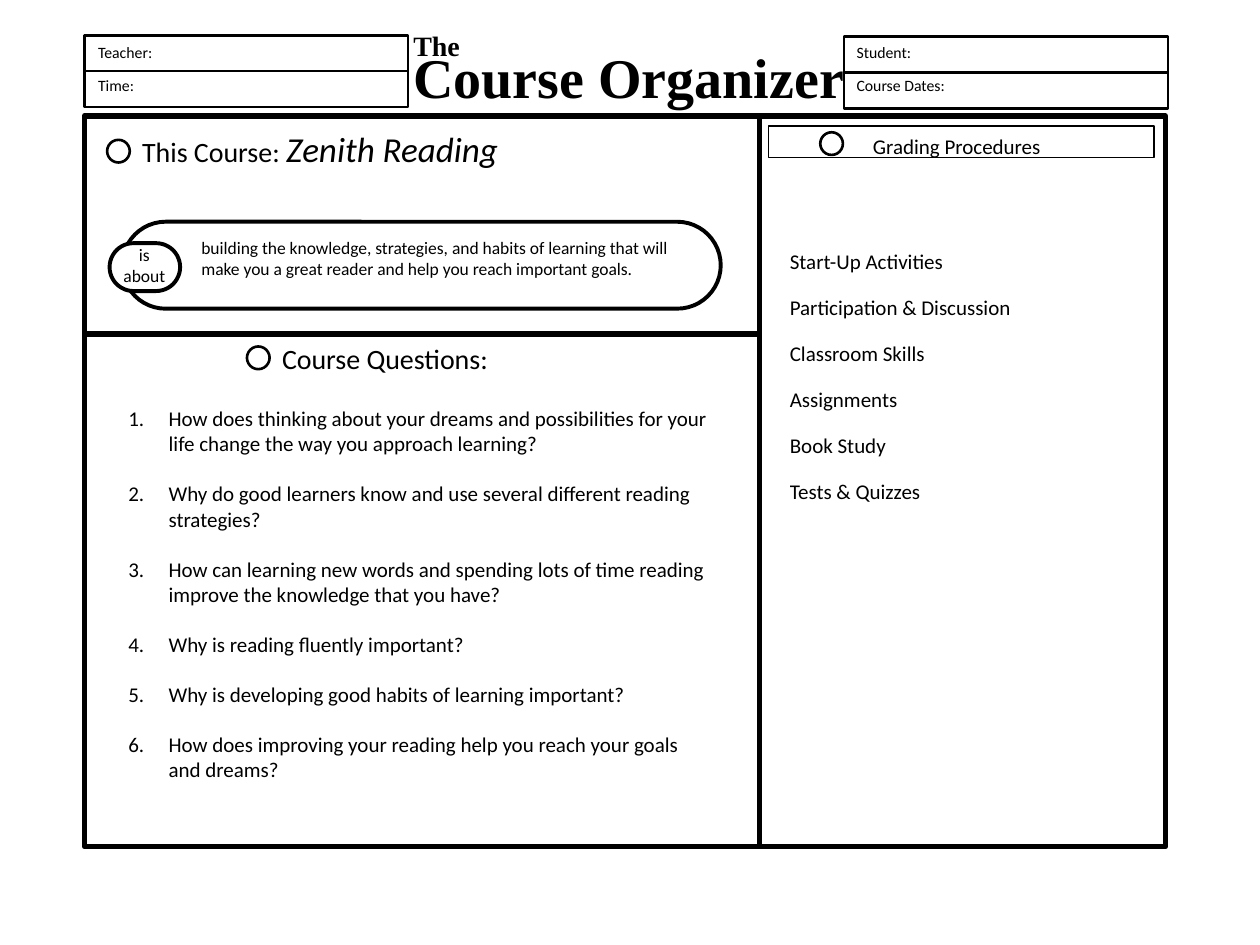
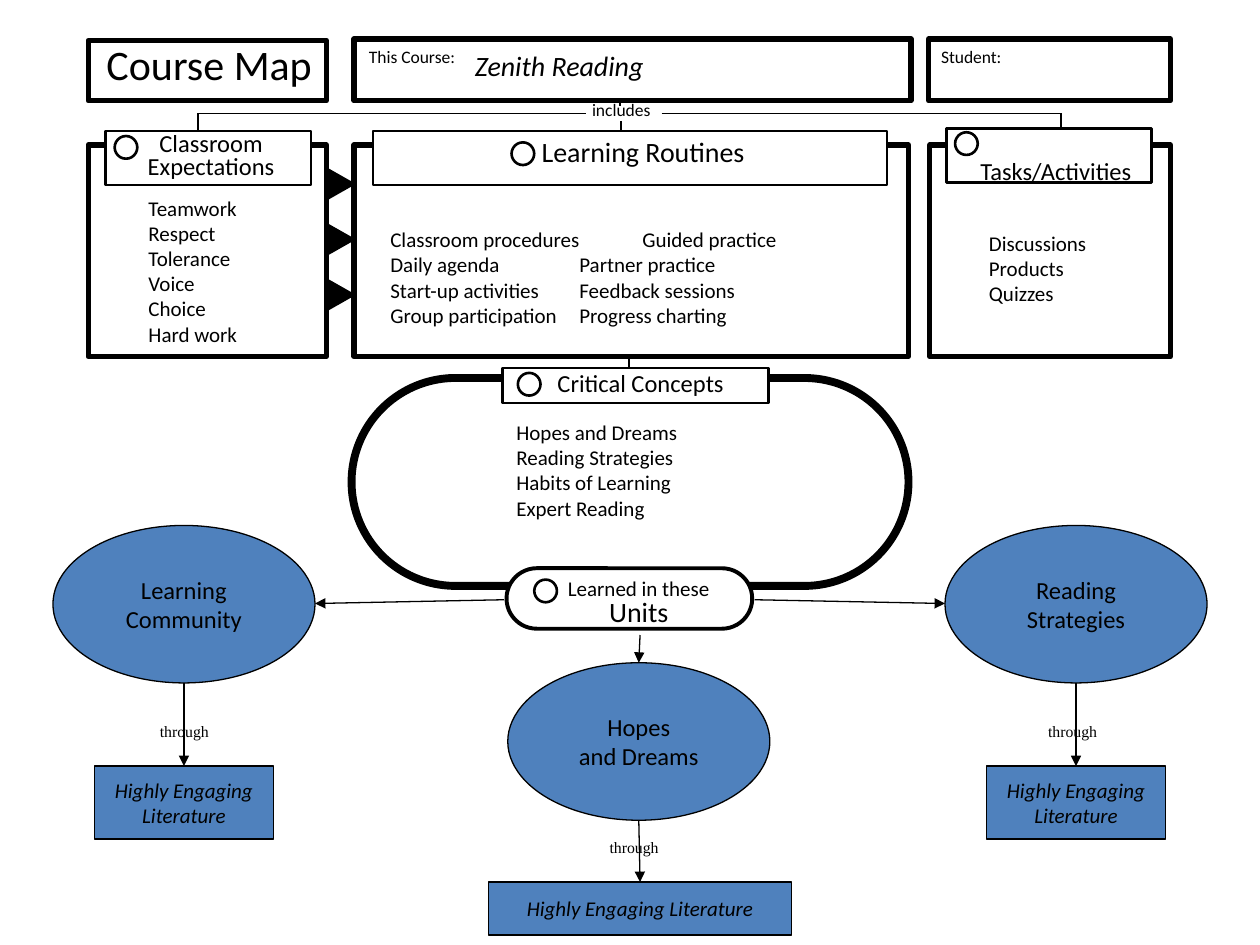
"""Build a course organizer slide and a course map slide."""
from lxml.etree import SubElement
from pptx import Presentation
from pptx.dml.color import RGBColor
from pptx.enum.shapes import MSO_CONNECTOR as Connector, MSO_SHAPE as Shape
from pptx.enum.text import MSO_ANCHOR as Anchor, MSO_AUTO_SIZE as AutoSize, PP_ALIGN as Align
from pptx.oxml.ns import qn
from pptx.util import Emu, Pt

PX = 9144
SLIDE_SIZE = (1000, 750)
TITLE_ONLY = 5
CIRCLE = 18
COLORS = {"ink": "000000", "paper": "FFFFFF", "unit": "4F81BD"}
SANS, SERIF = "Calibri", "Times New Roman"
COURSE = "Zenith Reading"

ORGANIZER_TITLE = ["The", "Course Organizer"]
FIELD_BOXES = [
    ((67, 28, 257, 57), [((68, 29, 69, 25), "Teacher:"), ((68, 55, 51, 25), "Time:")]),
    ((670, 29, 257, 57), [((670, 29, 67, 25), "Student:"), ((670, 55, 100, 25), "Course Dates:")]),
]
ORGANIZER_FRAME = (67, 92, 858, 580)
ORGANIZER_DIVIDERS = [(603, 265, 67, 265), (603, 94, 603, 671)]
ORGANIZER_CIRCLES = [(651, 105), (85, 111), (196, 275)]
ABOUT = ("building the knowledge, strategies, and habits of learning that will make you "
         "a great reader and help you reach important goals.")
QUESTIONS = [
    "How does thinking about your dreams and possibilities for your life change the way you approach learning?",
    "Why do good learners know and use several different reading strategies?",
    "How can learning new words and spending lots of time reading improve the knowledge that you have?",
    "Why is reading fluently important?",
    "Why is developing good habits of learning important?",
    "How does improving your reading help you reach your goals and dreams?",
]
GRADED_WORK = ["Start-Up Activities", "Participation & Discussion", "Classroom Skills",
               "Assignments", "Book Study", "Tests & Quizzes"]

MAP_TITLE = ["Course Map"]
TREE_LINES = [
    (492, 80, 492, 84), (493, 96, 493, 107), (842, 90, 842, 106), (157, 90, 157, 111),
    (499, 281, 499, 293), (525, 90, 842, 90), (158, 90, 465, 90),
]
MAP_FRAMES = [
    (70, 32, 189, 48), (281, 31, 442, 49), (737, 31, 192, 49),
    (70, 115, 189, 168), (281, 115, 440, 168), (738, 115, 191, 168),
]
MAP_HEADERS = [(84, 104, 163, 43), (296, 104, 408, 43), (751, 102, 163, 43), (399, 292, 211, 28)]
MAP_CIRCLES = [(91, 108), (406, 113), (758, 105), (411, 296), (424, 460)]
MAP_HEADINGS = [
    ((102, 101, 131, 47), ["Classroom", "Expectations"], 14, Align.CENTER),
    ((420, 107, 201, 31), ["Learning Routines"], 16, Align.LEFT),
    ((758, 123, 160, 28), ["Tasks/Activities"], 14, Align.CENTER),
    ((425, 292, 167, 29), ["Critical Concepts"], 14, Align.CENTER),
    ((283, 35, 99, 23), ["This Course:"], 10, Align.LEFT),
    ((460, 77, 71, 23), ["includes"], 10, Align.LEFT),
    ((737, 35, 72, 23), ["Student:"], 10, Align.LEFT),
]
MAP_LISTS = [
    ((108, 150, 98, 130), ["Teamwork", "Respect", "Tolerance", "Voice", "Choice", "Hard work"]),
    ((775, 178, 109, 90), ["Discussions", "Products", "Quizzes"]),
    ((400, 328, 318, 110), ["Hopes and Dreams", "Reading Strategies", "Habits of Learning",
                            "Expert Reading"]),
]
ROUTINES = [
    ("Classroom procedures", "Guided practice", 200),
    ("Daily agenda", "Partner practice", 150),
    ("Start-up activities", "Feedback sessions", 150),
    ("Group participation", "Progress charting", 150),
]
UNITS = [
    {"oval": (42, 417), "name": ["Learning", "Community"], "book": (75, 608, 142, 58),
     "text": ["Highly Engaging", "Literature"], "through": (117, 568), "arrow": (400, 476, 250, 479)},
    {"oval": (403, 526), "name": ["Hopes", "and Dreams"], "book": (388, 700, 240, 42),
     "text": ["Highly Engaging Literature"], "through": (474, 660), "arrow": (508, 504, 507, 526)},
    {"oval": (750, 417), "name": ["Reading", "Strategies"], "book": (783, 608, 142, 58),
     "text": ["Highly Engaging", "Literature"], "through": (822, 568), "arrow": (599, 476, 750, 479)},
]
OVAL_SIZE = (208, 125)


def px(*values):
    """Turn px lengths into EMU."""
    return [Emu(value * PX) for value in values]


def color(name):
    """Look up a palette colour."""
    return RGBColor.from_string(COLORS[name])


def style_run(run, size, font=SANS, bold=False, italic=False):
    """Format one run."""
    run.font.name, run.font.size = font, Pt(size)
    run.font.bold, run.font.italic = bold, italic
    run.font.color.rgb = color("ink")


def write(frame, lines, size, align=Align.LEFT, spacing=None, wrap=False, gap=0, **style):
    """Fill a text frame with one paragraph per line."""
    frame.text = "\n".join(lines)
    frame.word_wrap, frame.auto_size = wrap, AutoSize.NONE
    for paragraph in frame.paragraphs:
        paragraph.alignment = align
        paragraph.space_before, paragraph.space_after = Pt(0), Pt(gap)
        if spacing:
            paragraph.line_spacing = spacing
        for run in paragraph.runs:
            style_run(run, size, **style)


def add_label(slide, box, lines, size, **options):
    """Add a text box and return its frame."""
    frame = slide.shapes.add_textbox(*px(*box)).text_frame
    write(frame, lines, size, **options)
    return frame


def add_box(slide, kind, box, weight, fill=None):
    """Add a preset shape with a black outline."""
    shape = slide.shapes.add_shape(kind, *px(*box))
    shape.shadow.inherit = False
    if kind == Shape.ROUNDED_RECTANGLE:
        shape.adjustments[0] = 0.5
    if fill:
        shape.fill.solid()
        shape.fill.fore_color.rgb = color(fill)
    else:
        shape.fill.background()
    if weight:
        shape.line.color.rgb = color("ink")
        shape.line.width = Pt(weight)
    else:
        shape.line.fill.background()
    return shape


def add_line(slide, ends, weight, arrow=False):
    """Add a straight connector, with an arrowhead if asked."""
    connector = slide.shapes.add_connector(Connector.STRAIGHT, *px(*ends))
    connector.line.color.rgb = color("ink")
    connector.line.width = Pt(weight)
    if arrow:
        SubElement(connector.line._get_or_add_ln(), qn("a:tailEnd"), type="triangle")
    SubElement(connector._element.spPr, qn("a:effectLst"))
    return connector


def add_circles(slide, corners):
    """Add the small open circles that mark headings."""
    for corner in corners:
        add_box(slide, Shape.OVAL, (*corner, CIRCLE, CIRCLE), 1.5)


def add_titled_slide(presentation, box, lines, size, **options):
    """Add a title-only slide and return it with its title frame."""
    slide = presentation.slides.add_slide(presentation.slide_layouts[TITLE_ONLY])
    title = slide.shapes.title
    title.left, title.top, title.width, title.height = px(*box)
    title.text_frame.vertical_anchor = Anchor.TOP
    title.text_frame.margin_right = 0
    write(title.text_frame, lines, size, wrap=True, **options)
    return slide, title.text_frame


def build_organizer(presentation):
    """Build the course organizer slide."""
    slide, title = add_titled_slide(presentation, (318, 25, 370, 66), ORGANIZER_TITLE, 32,
                                    spacing=0.7, font=SERIF, bold=True)
    title.paragraphs[0].runs[0].font.size = Pt(16)
    add_box(slide, Shape.RECTANGLE, ORGANIZER_FRAME, 3)
    for ends in ORGANIZER_DIVIDERS:
        add_line(slide, ends, 3)
    for box, fields in FIELD_BOXES:
        field_box = add_box(slide, Shape.RECTANGLE, box, 1.5)
        divider = add_line(slide, (0, 0, 1, 0), 1.5)
        divider.begin_connect(field_box, 1)
        divider.end_connect(field_box, 3)
        for field, text in fields:
            add_label(slide, field, [text], 9)
    add_box(slide, Shape.RECTANGLE, (610, 100, 306, 25), 1)
    add_circles(slide, ORGANIZER_CIRCLES)

    course = add_label(slide, (103, 96, 353, 43), ["This Course: "], 16)
    name = course.paragraphs[0].add_run()
    name.text = COURSE
    style_run(name, 20, italic=True)
    add_label(slide, (214, 266, 204, 37), ["Course Questions:"], 16)
    add_label(slide, (683, 101, 169, 30), ["Grading Procedures"], 12)

    add_box(slide, Shape.ROUNDED_RECTANGLE, (97, 176, 475, 69), 2.25)
    add_box(slide, Shape.ROUNDED_RECTANGLE, (87, 193, 56, 38), 2.25, "paper")
    add_label(slide, (87, 189, 55, 43), ["is", "about"], 10, align=Align.CENTER)
    add_label(slide, (150, 183, 417, 77), [ABOUT], 10, wrap=True)

    numbered = [f"{number}.\t{question}" for number, question in enumerate(QUESTIONS, 1)]
    questions = add_label(slide, (92, 317, 485, 324), numbered, 12, wrap=True, gap=14.2)
    for paragraph in questions.paragraphs:
        properties = paragraph._p.get_or_add_pPr()
        properties.set("marL", str(32 * PX))
        properties.set("indent", str(-32 * PX))
    add_label(slide, (617, 192, 292, 230), GRADED_WORK, 12, wrap=True, gap=12)


def add_unit(slide, unit):
    """Add a unit oval with its arrows and reading box."""
    left, top = unit["oval"]
    width, height = OVAL_SIZE
    oval = add_box(slide, Shape.OVAL, (left, top, width, height), 0.75, "unit")
    book = add_box(slide, Shape.RECTANGLE, unit["book"], 0.75, "unit")
    write(oval.text_frame, unit["name"], 14, align=Align.CENTER)
    write(book.text_frame, unit["text"], 12, align=Align.CENTER, italic=True)
    for shape in (oval, book):
        shape.text_frame.vertical_anchor = Anchor.MIDDLE
    add_label(slide, (*unit["through"], 67, 25), ["through"], 9, wrap=True, font=SERIF)
    add_line(slide, unit["arrow"], 0.75, arrow=True)
    center, bottom = left + width // 2, top + height
    down = add_line(slide, (center, bottom, center, unit["book"][1]), 0.75, arrow=True)
    down.end_connect(book, 0)


def build_map(presentation):
    """Build the course map slide."""
    slide, title = add_titled_slide(presentation, (72, 33, 188, 42), MAP_TITLE, 24,
                                    align=Align.CENTER, spacing=0.8)
    title.margin_left = 0
    for ends in TREE_LINES:
        add_line(slide, ends, 1)
    add_box(slide, Shape.ROUNDED_RECTANGLE, (279, 300, 442, 165), 4.5)
    for box in MAP_FRAMES:
        add_box(slide, Shape.RECTANGLE, box, 3)
    for box in MAP_HEADERS:
        add_box(slide, Shape.RECTANGLE, box, 1.5, "paper")
    for row in range(3):
        pointer = add_box(slide, Shape.ISOSCELES_TRIANGLE, (259, 135 + 44 * row, 25, 22), 0, "ink")
        pointer.rotation = 90
    add_box(slide, Shape.ROUNDED_RECTANGLE, (402, 451, 195, 48), 2.25, "paper")
    add_circles(slide, MAP_CIRCLES)

    for box, lines, size, align in MAP_HEADINGS:
        add_label(slide, box, lines, size, align=align, spacing=0.8)
    learned = add_label(slide, (435, 456, 144, 47), ["Learned in these", "Units"], 12,
                        align=Align.CENTER, spacing=0.8)
    learned.paragraphs[1].runs[0].font.size = Pt(16)
    add_label(slide, (367, 34, 181, 37), [COURSE], 16, italic=True)
    for box, lines in MAP_LISTS:
        add_label(slide, box, lines, 12, wrap=True)

    rows = [f"{first}\t{second}" for first, second, _ in ROUTINES]
    routines = add_label(slide, (300, 175, 400, 90), rows, 12, wrap=True)
    for paragraph, (_, _, stop) in zip(routines.paragraphs, ROUTINES):
        tabs = SubElement(paragraph._p.get_or_add_pPr(), qn("a:tabLst"))
        SubElement(tabs, qn("a:tab"), pos=str(stop * PX), algn="l")
    for unit in UNITS:
        add_unit(slide, unit)


def main():
    """Build and save the presentation."""
    presentation = Presentation()
    presentation.slide_width, presentation.slide_height = px(*SLIDE_SIZE)
    build_organizer(presentation)
    build_map(presentation)
    presentation.save("out.pptx")


if __name__ == "__main__":
    main()
